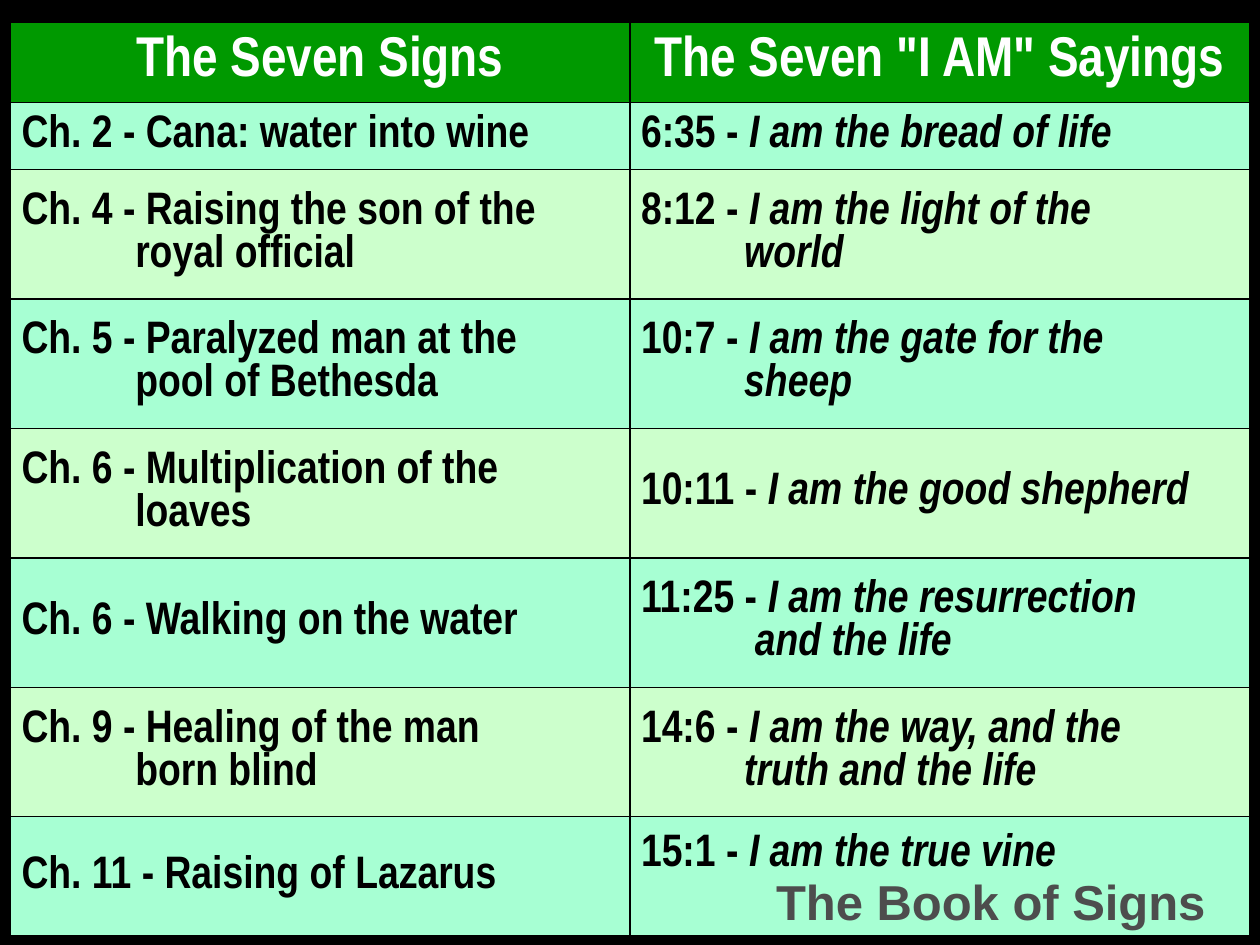
from lxml.etree import SubElement as Sub
from pptx import Presentation
from pptx.dml.color import RGBColor
from pptx.enum.text import MSO_ANCHOR as Anchor, PP_ALIGN as Align
from pptx.oxml.ns import qn
from pptx.util import Pt

HEADS = ["The Seven Signs", 'The Seven "I AM" Sayings']
ROWS = [
    ("Ch. 2 - Cana: water into wine", "6:35", "I am the bread of life"),
    ("Ch. 4 - Raising the son of the\vroyal official", "8:12", "I am the light of the\vworld"),
    ("Ch. 5 - Paralyzed man at the\vpool of Bethesda", "10:7", "I am the gate for the\vsheep"),
    ("Ch. 6 - Multiplication of the\vloaves", "10:11", "I am the good shepherd"),
    ("Ch. 6 - Walking on the water", "11:25", "I am the resurrection\vand the life"),
    ("Ch. 9 - Healing of the man\vborn blind", "14:6", "I am the way, and the\vtruth and the life"),
    ("Ch. 11 - Raising of Lazarus", "15:1", "I am the true vine"),
]
HIGHS = [46.1, 38.2] + [74] * 5 + [68.2]
WIDE = 354
HEAD, BANDS = "009900", ["A7FFD3", "CCFFCC"]
INSET, PAD = 0.7, 6.3


def rgb(code):
    return RGBColor.from_string(code)


def write(par, text, size=26, font="Arial Narrow", color="000000", italic=False):
    for num, line in enumerate(text.split("\v")):
        if num:
            par.add_line_break()
        run = par.add_run()
        run.text = line
        run.font.size, run.font.name = Pt(size), font
        run.font.bold, run.font.italic = True, italic
        run.font.color.rgb = rgb(color)
    return run


def edge(cell):
    props = cell._tc.get_or_add_tcPr()
    for num, side in enumerate(["lnL", "lnR", "lnT", "lnB"]):
        line = props.makeelement(qn("a:" + side), {"w": str(Pt(1))})
        fill = Sub(line, qn("a:solidFill"))
        Sub(fill, qn("a:srgbClr"), val="000000")
        props.insert(num, line)


def style(cell, fill, left=INSET, low=INSET):
    cell.fill.solid()
    cell.fill.fore_color.rgb = rgb(fill)
    cell.vertical_anchor = Anchor.MIDDLE
    cell.margin_left, cell.margin_bottom = Pt(left), Pt(low)
    cell.margin_right = cell.margin_top = Pt(INSET)
    edge(cell)
    return cell.text_frame.paragraphs[0]


def hang(par, size):
    props = par._p.get_or_add_pPr()
    props.set("marL", str(Pt(size)))
    props.set("indent", str(-Pt(size)))


deck = Presentation()
deck.slide_width, deck.slide_height = Pt(720), Pt(540)
slide = deck.slides.add_slide(deck.slide_layouts[6])
slide.background.fill.solid()
slide.background.fill.fore_color.rgb = rgb("000000")

table = slide.shapes.add_table(
    len(HIGHS), 2, Pt(6), Pt(12.5), Pt(2 * WIDE), Pt(sum(HIGHS))).table
for col in table.columns:
    col.width = Pt(WIDE)
for row, high in zip(table.rows, HIGHS):
    row.height = Pt(high)

for num, head in enumerate(HEADS):
    par = style(table.cell(0, num), HEAD)
    par.alignment = Align.CENTER
    write(par, head, size=32, color="FFFFFF")

for num, (sign, verse, saying) in enumerate(ROWS, 1):
    fill = BANDS[(num - 1) % 2]
    par = style(table.cell(num, 0), fill, left=PAD)
    hang(par, 65)
    write(par, sign)
    low = 25 if num == len(ROWS) else INSET
    par = style(table.cell(num, 1), fill, left=PAD, low=low)
    hang(par, 65 if len(verse) > 4 else 59)
    write(par, verse + " - ")
    write(par, saying, italic=True)

box = slide.shapes.add_textbox(Pt(408), Pt(494.6), Pt(288), Pt(45))
box.text_frame.word_wrap = True
par = box.text_frame.paragraphs[0]
par.alignment = Align.RIGHT
run = write(par, "The Book of Signs", size=28, font="Arial", color="4D4D4D")
props = run.font._element
line = props.makeelement(qn("a:ln"), {"w": str(Pt(0.75))})
Sub(Sub(line, qn("a:solidFill")), qn("a:srgbClr"), val="FFFFFF")
props.insert(0, line)

deck.save("out.pptx")
